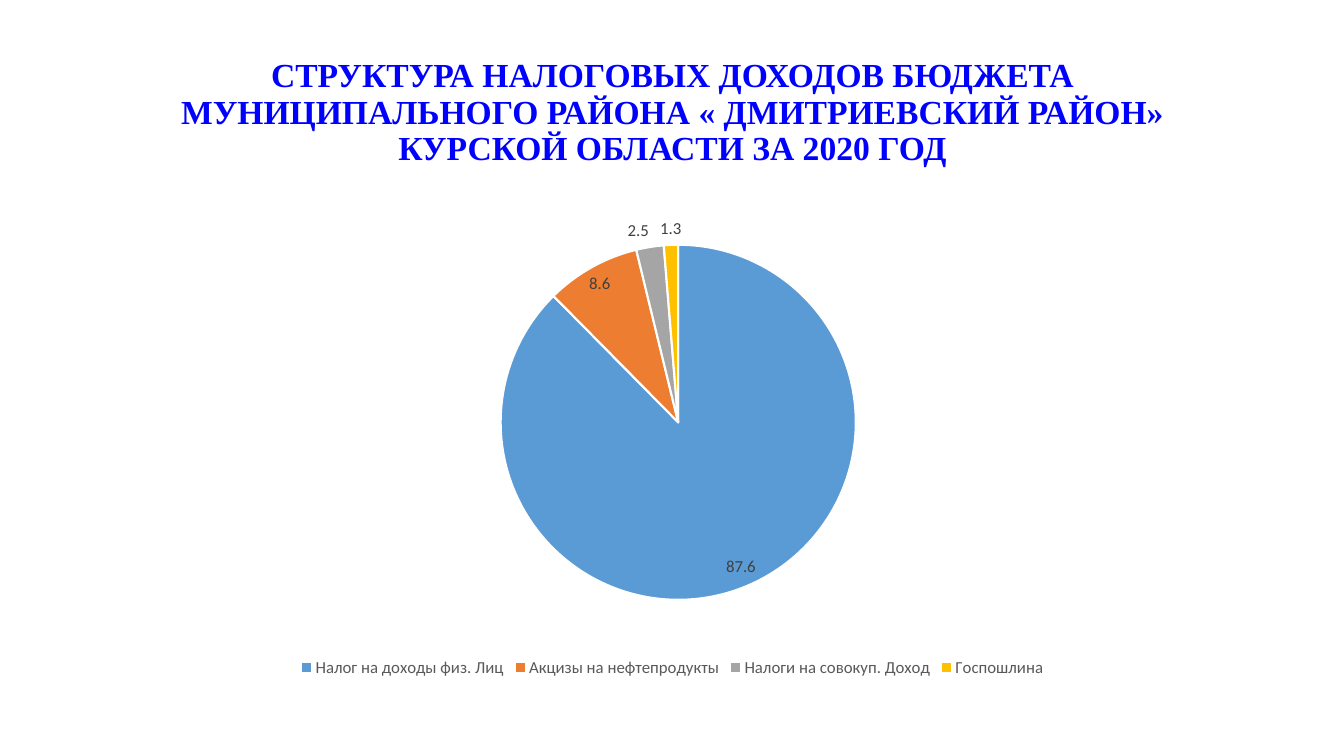
from lxml import etree
from pptx import Presentation
from pptx.chart.data import CategoryChartData
from pptx.dml.color import RGBColor
from pptx.enum.chart import XL_CHART_TYPE, XL_LABEL_POSITION, XL_LEGEND_POSITION
from pptx.enum.text import MSO_ANCHOR, PP_ALIGN
from pptx.oxml.ns import qn
from pptx.util import Inches, Pt

PIE = XL_CHART_TYPE.PIE
BEST_FIT = XL_LABEL_POSITION.BEST_FIT
BOTTOM = XL_LEGEND_POSITION.BOTTOM
MIDDLE = MSO_ANCHOR.MIDDLE
CENTER = PP_ALIGN.CENTER

COLORS = {
    "heading": "0000FF",
    "legend": "595959",
    "label": "404040",
    "border": "FFFFFF",
    "text": "000000",
}

# Tax, share of revenue in percent, slice colour
TAXES = [
    ("Налог на доходы физ. Лиц", 87.6, "5B9BD5"),
    ("Акцизы на нефтепродукты", 8.6, "ED7D31"),
    ("Налоги на совокуп. Доход", 2.5, "A5A5A5"),
    ("Госпошлина", 1.3, "FFC000"),
]


class Deck:
    """Holds the style and the current slide; lengths are grid columns and rows."""

    WIDTH, HEIGHT = 13.33, 7.5
    COLUMNS, ROWS = 100, 100
    HEADING_FONT, BODY_FONT = "Times New Roman", "Calibri"

    def __init__(self):
        self.deck = Presentation()
        self.deck.slide_width = Inches(self.WIDTH)
        self.deck.slide_height = Inches(self.HEIGHT)
        self.slide = self.deck.slides.add_slide(self.deck.slide_layouts[6])

    def box(self, column, row, columns, rows):
        across = self.WIDTH / self.COLUMNS
        down = self.HEIGHT / self.ROWS
        return (Inches(column * across), Inches(row * down),
                Inches(columns * across), Inches(rows * down))

    def style(self, font, name, size, color, bold=False):
        font.name = name
        font.size = Pt(size)
        font.bold = bold
        font.color.rgb = RGBColor.from_string(COLORS[color])

    def heading(self, words, *cells):
        frame = self.slide.shapes.add_textbox(*self.box(*cells)).text_frame
        frame.word_wrap = True
        frame.vertical_anchor = MIDDLE
        paragraph = frame.paragraphs[0]
        paragraph.alignment = CENTER
        paragraph.line_spacing = 0.9
        run = paragraph.add_run()
        run.text = words
        self.style(run.font, self.HEADING_FONT, 24, "heading", bold=True)

    def pie(self, name, slices, plot_area, *cells):
        shares = CategoryChartData()
        shares.categories = [tax for tax, _, _ in slices]
        shares.add_series(name, [share for _, share, _ in slices])
        chart = self.slide.shapes.add_chart(PIE, *self.box(*cells), shares).chart
        chart.has_title = False
        self.style(chart.font, self.BODY_FONT, 10, "text")

        # Legend
        chart.has_legend = True
        chart.legend.position = BOTTOM
        chart.legend.include_in_layout = False
        self.style(chart.legend.font, self.BODY_FONT, 12, "legend")

        # Slices
        plot = chart.plots[0]
        plot.vary_by_categories = True
        for index, (_, _, color) in enumerate(slices):
            wedge = plot.series[0].points[index].format
            wedge.fill.solid()
            wedge.fill.fore_color.rgb = RGBColor.from_string(color)
            wedge.line.color.rgb = RGBColor.from_string(COLORS["border"])
            wedge.line.width = Pt(1.5)

        # Values
        labels = plot.series[0].data_labels
        labels.show_value = True
        labels.position = BEST_FIT
        self.style(labels.font, self.BODY_FONT, 12, "label")

        self.place_plot(chart, plot_area)

    def place_plot(self, chart, shares):
        area = chart.element.find(f".//{qn('c:plotArea')}")
        for automatic in area.findall(qn("c:layout")):
            area.remove(automatic)
        layout = etree.Element(qn("c:layout"))
        manual = etree.SubElement(layout, qn("c:manualLayout"))
        settings = [("layoutTarget", "inner"), ("xMode", "edge"), ("yMode", "edge")]
        settings += zip("xywh", shares)
        for tag, value in settings:
            etree.SubElement(manual, qn(f"c:{tag}")).set("val", str(value))
        area.insert(0, layout)

    def save(self):
        self.deck.save("out.pptx")


def main():
    budget = Deck()

    # Heading
    budget.heading(
        "СТРУКТУРА НАЛОГОВЫХ ДОХОДОВ БЮДЖЕТА МУНИЦИПАЛЬНОГО РАЙОНА "
        "« ДМИТРИЕВСКИЙ РАЙОН» КУРСКОЙ ОБЛАСТИ ЗА 2020 ГОД",
        6.9, 5.33, 86.27, 19.33)

    # Tax revenue shares
    budget.pie("Series 1", TAXES, (0.08, 0.09, 0.85, 0.74),
               6.9, 26.67, 86.27, 63.47)

    budget.save()


if __name__ == "__main__":
    main()
